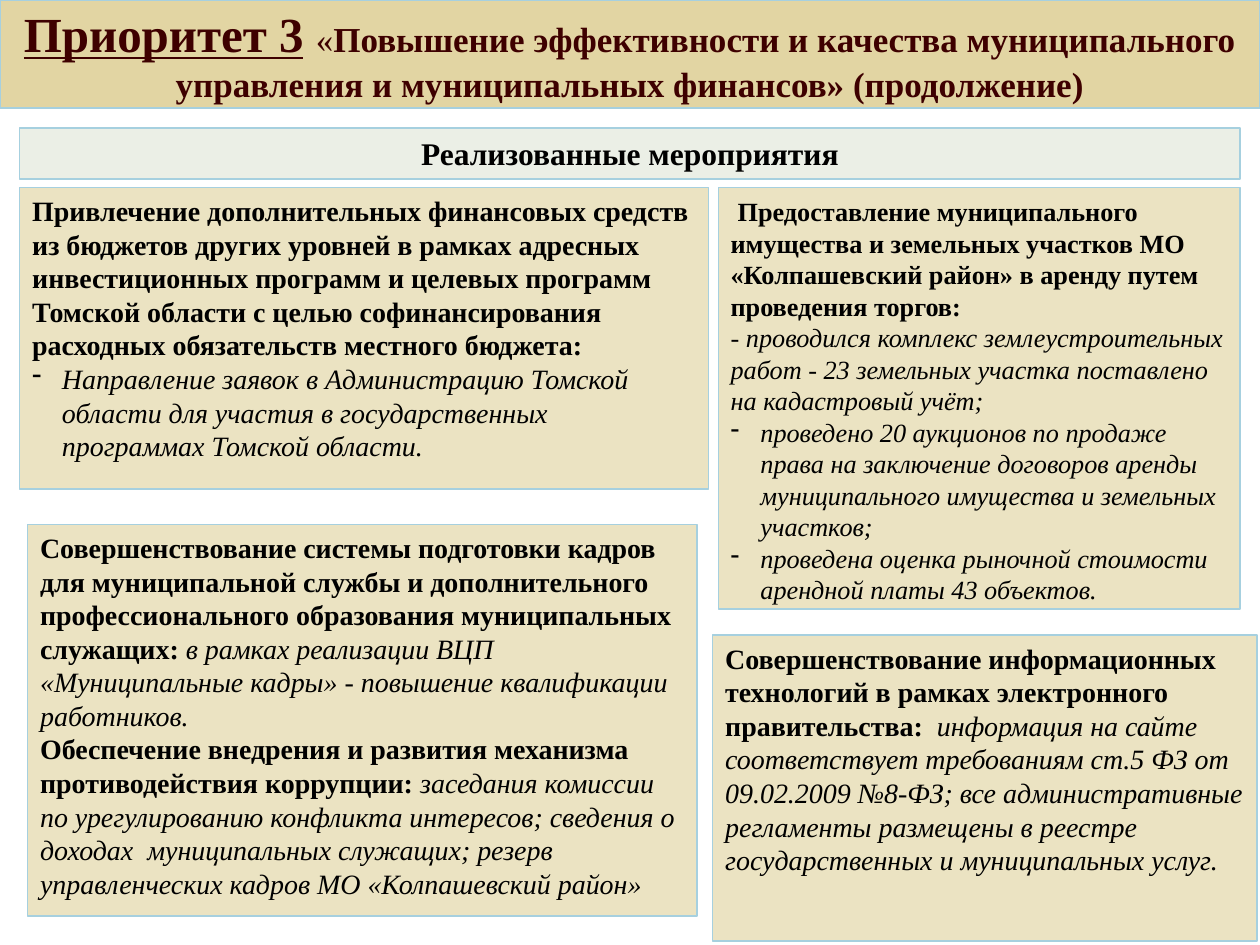
from dataclasses import dataclass

from lxml import etree
from pptx import Presentation
from pptx import util as u
from pptx.dml.color import RGBColor
from pptx.enum import shapes, text
from pptx.oxml.ns import qn

HUES = {"head": "E2D5A3", "band": "EBEFE6", "card": "EBE3C2",
        "edge": "A6D0DF", "title": "3E0000", "ink": "000000"}
FACE = "Times New Roman"
BOLD = {"bold": True}
SLANT = {"italic": True}


@dataclass
class Run:
    words: str
    style: dict
    size: float = 16


@dataclass
class Para:
    runs: list[Run]
    dash: bool = False


@dataclass
class Box:
    left: float
    top: float
    width: float
    height: float
    paras: list[Para]
    fill: str = "card"
    ink: str = "ink"
    mid: bool = False
    grow: bool = True


def add_dash(para) -> None:
    """Give a paragraph a hanging dash."""
    props = para._p.get_or_add_pPr()
    props.set("marL", str(u.Cm(0.6)))
    props.set("indent", str(-u.Cm(0.6)))
    etree.SubElement(props, qn("a:buFontTx"))
    etree.SubElement(props, qn("a:buChar")).set("char", "-")


def add_run(para, run: Run, ink: str) -> None:
    part = para.add_run()
    part.text = run.words
    form = {"name": FACE, "size": u.Pt(run.size), "bold": False, **run.style}
    for key, val in form.items():
        setattr(part.font, key, val)
    part.font.color.rgb = RGBColor.from_string(HUES[ink])


def add_box(slide, box: Box) -> None:
    area = [u.Cm(n) for n in (box.left, box.top, box.width, box.height)]
    rect = slide.shapes.add_shape(shapes.MSO_SHAPE.RECTANGLE, *area)
    rect.shadow.inherit = False
    rect.fill.solid()
    rect.fill.fore_color.rgb = RGBColor.from_string(HUES[box.fill])
    rect.line.color.rgb = RGBColor.from_string(HUES["edge"])
    rect.line.width = u.Pt(0.75)
    frame = rect.text_frame
    fit = text.MSO_AUTO_SIZE
    form = {"word_wrap": True,
            "auto_size": fit.SHAPE_TO_FIT_TEXT if box.grow else fit.NONE,
            "vertical_anchor": text.MSO_ANCHOR.MIDDLE if box.fill == "head"
            else text.MSO_ANCHOR.TOP}
    for key, val in form.items():
        setattr(frame, key, val)
    for i, item in enumerate(box.paras):
        para = frame.add_paragraph() if i else frame.paragraphs[0]
        para.alignment = text.PP_ALIGN.CENTER if box.mid else text.PP_ALIGN.LEFT
        if item.dash:
            add_dash(para)
        for run in item.runs:
            add_run(para, run, box.ink)


BOXES = [
    # Title band
    Box(0, 0, 25.4, 2.18, [Para([
        Run("Приоритет 3", {"bold": True, "underline": True}, 28),
        Run(" ", {}, 28),
        Run("«", {}, 20),
        Run("Повышение эффективности и качества муниципального управления "
            "и муниципальных финансов» (продолжение)", BOLD, 20)])],
        fill="head", ink="title", mid=True, grow=False),
    # Staff training and anti-corruption
    Box(0.56, 10.57, 13.49, 7.9, [
        Para([Run("Совершенствование системы подготовки кадров для муниципальной "
                  "службы и дополнительного профессионального образования "
                  "муниципальных служащих:", BOLD),
              Run(" в рамках реализации ВЦП «Муниципальные кадры» - повышение "
                  "квалификации работников.", SLANT)]),
        Para([Run("Обеспечение внедрения и развития механизма противодействия "
                  "коррупции: ", BOLD),
              Run("заседания комиссии по урегулированию конфликта интересов; "
                  "сведения о доходах  муниципальных служащих; резерв "
                  "управленческих кадров МО «Колпашевский район»", SLANT)])]),
    # Information technology
    Box(14.37, 12.8, 10.97, 6.17, [
        Para([Run("Совершенствование информационных технологий в рамках "
                  "электронного правительства:  ", BOLD),
              Run("информация на сайте соответствует требованиям ст.5 ФЗ от "
                  "09.02.2009 №8-ФЗ; все административные регламенты размещены "
                  "в реестре государственных и муниципальных услуг.", SLANT)])]),
    # Property and land leases
    Box(14.48, 3.78, 10.52, 8.5, [
        Para([Run(" ", BOLD),
              Run("Предоставление муниципального имущества и земельных участков "
                  "МО «Колпашевский район» в аренду путем проведения торгов:",
                  BOLD, 15)]),
        Para([Run("- проводился комплекс землеустроительных работ - 23 земельных "
                  "участка поставлено на кадастровый учёт;", SLANT, 15)]),
        Para([Run("проведено 20 аукционов по продаже права на заключение "
                  "договоров аренды муниципального имущества и земельных "
                  "участков;", SLANT, 15)], dash=True),
        Para([Run("проведена оценка рыночной стоимости арендной платы "
                  "43 объектов.", SLANT, 15)], dash=True)]),
    # Section heading
    Box(0.4, 2.58, 24.6, 1.03,
        [Para([Run("Реализованные мероприятия", BOLD, 18)])],
        fill="band", mid=True),
    # Outside funding
    Box(0.4, 3.78, 13.89, 6.08, [
        Para([Run("Привлечение дополнительных финансовых средств из бюджетов "
                  "других уровней в рамках адресных инвестиционных программ и "
                  "целевых программ Томской области с целью софинансирования "
                  "расходных обязательств местного бюджета:", BOLD)]),
        Para([Run("Направление заявок в Администрацию Томской области для "
                  "участия в государственных программах Томской области.",
                  SLANT)], dash=True)]),
]


def main() -> None:
    deck = Presentation()
    deck.slide_width, deck.slide_height = u.Cm(25.4), u.Cm(19.05)
    slide = deck.slides.add_slide(deck.slide_layouts[6])
    for box in BOXES:
        add_box(slide, box)
    deck.save("out.pptx")


if __name__ == "__main__":
    main()
